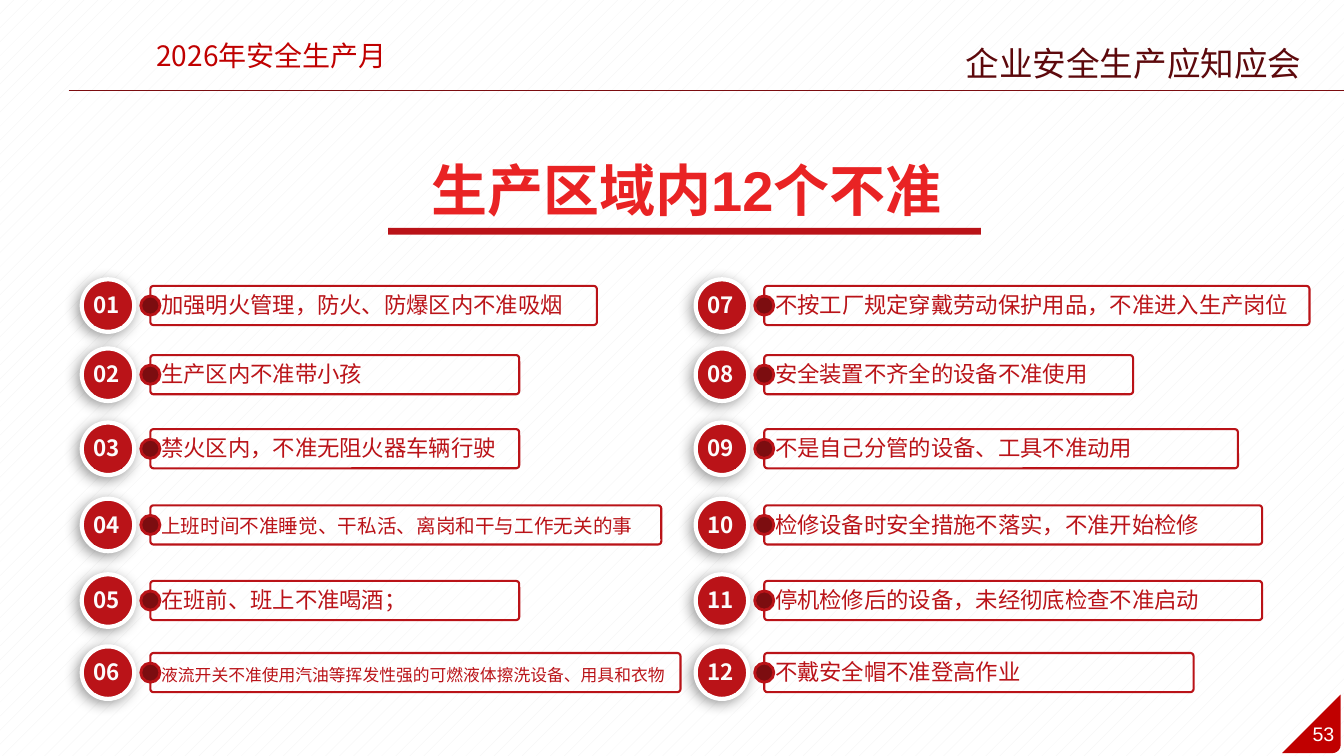
from math import cos, sin, radians
from lxml.etree import SubElement as Sub
from pptx import Presentation
from pptx.util import Pt
from pptx.dml.color import RGBColor as Rgb
from pptx.enum.dml import MSO_PATTERN as Pattern
from pptx.enum.shapes import MSO_SHAPE as Shape, MSO_CONNECTOR as Wire
from pptx.enum.text import PP_ALIGN as Align, MSO_ANCHOR as Anchor, MSO_AUTO_SIZE as Fit
from pptx.oxml.ns import qn

# Content
MONTH = "2026年安全生产月"
TOPIC = "企业安全生产应知应会"
TITLE = "生产区域内12个不准"
PAGE = "53"
# (rule, box width, type size key), one list for each column
RULES = [
    [
        ("加强明火管理，防火、防爆区内不准吸烟", 319, "body"),
        ("生产区内不准带小孩", 263.5, "body"),
        ("禁火区内，不准无阻火器车辆行驶", 263.5, "body"),
        ("上班时间不准睡觉、干私活、离岗和干与工作无关的事", 365, "small"),
        ("在班前、班上不准喝酒；", 263.5, "body"),
        ("液流开关不准使用汽油等挥发性强的可燃液体擦洗设备、用具和衣物", 378.7, "tiny"),
    ],
    [
        ("不按工厂规定穿戴劳动保护用品，不准进入生产岗位", 389.5, "body"),
        ("安全装置不齐全的设备不准使用", 263.5, "body"),
        ("不是自己分管的设备、工具不准动用", 338.4, "body"),
        ("检修设备时安全措施不落实，不准开始检修", 355.7, "body"),
        ("停机检修后的设备，未经彻底检查不准启动", 355.7, "body"),
        ("不戴安全帽不准登高作业", 306.7, "body"),
    ],
]

# Theme
THEME = {
    "red": "BA1318", "dark": "7C0D10", "deep": "5D090C", "bright": "E92324",
    "brand": "C00000", "white": "FFFFFF", "pale": "FCFCFC", "grain": "F2F2F2",
    "cjk": "Noto Sans CJK SC", "latin": "Arial",
    "title": 40, "topic": 24, "month": 20, "body": 16, "small": 14, "tiny": 12,
}

# Layout
COLS = (58.4, 496.9)
ROWS = (199.5, 248.9, 301.8, 356.2, 410.2, 461.7)
DISC = 37.5
MID = DISC / 2
BOX_H = 28
DOT = 13.7


def tint(key):
    return Rgb.from_string(THEME[key])


def write(item, text, size, color, face="cjk", bold=False, align=Align.LEFT,
          lead=None, inset=None, wrap=True, anchor=Anchor.MIDDLE):
    frame = item.text_frame
    frame.text = text
    frame.word_wrap = wrap
    frame.vertical_anchor = anchor
    if inset:
        frame.margin_left = frame.margin_right = Pt(inset[0])
        frame.margin_top = frame.margin_bottom = Pt(inset[1])
    para = frame.paragraphs[0]
    para.alignment = align
    if lead:
        para.line_spacing = Pt(lead)
    font = para.runs[0].font
    font.size, font.bold, font.name = Pt(THEME[size]), bold, THEME[face]
    font.color.rgb = tint(color)
    Sub(para.runs[0]._r.get_or_add_rPr(), qn("a:ea"), typeface=THEME["cjk"])


def label(x, y, w, h, text, size, color, grow=True, **style):
    item = slide.shapes.add_textbox(Pt(x), Pt(y), Pt(w), Pt(h))
    style.setdefault("anchor", Anchor.TOP)
    write(item, text, size, color, **style)
    item.text_frame.auto_size = Fit.SHAPE_TO_FIT_TEXT if grow else Fit.NONE


def paint(item, fill=None, line=None, width=1):
    item.shadow.inherit = False
    if fill:
        item.fill.solid()
        item.fill.fore_color.rgb = tint(fill)
    else:
        item.fill.background()
    if line:
        item.line.color.rgb = tint(line)
        item.line.width = Pt(width)
    else:
        item.line.fill.background()


def draw(home, kind, x, y, w, h, *look):
    item = home.shapes.add_shape(kind, Pt(x), Pt(y), Pt(w), Pt(h))
    paint(item, *look)
    return item


def shade(item):
    glow = Sub(item._element.spPr.find(qn("a:effectLst")), qn("a:outerShdw"),
               blurRad=str(Pt(10)), dist=str(Pt(3)), dir="8100000",
               algn="tr", rotWithShape="0")
    black = Sub(glow, qn("a:srgbClr"), val="000000")
    Sub(black, qn("a:alpha"), val="40000")


def badge(x, y, num):
    group = slide.shapes.add_group_shape()
    shade(draw(group, Shape.OVAL, x, y, DISC, DISC, "red", "white", 3))
    plate = draw(group, Shape.RECTANGLE, x + 8.6, y + 8.6, 20.2, 24.5, "red")
    write(plate, f"{num:02d}", "body", "pale", bold=True, lead=14, inset=(0, 0))


def entry(x, y, text, wide, size):
    group = slide.shapes.add_group_shape()
    box = draw(group, Shape.ROUNDED_RECTANGLE, x + 49, y + MID - BOX_H / 2,
               wide, BOX_H, None, "red", 1.5)
    box.adjustments[0] = 0.08
    write(box, text, size, "red", lead=18, wrap=False)
    draw(group, Shape.FLOWCHART_CONNECTOR, x + 49 - DOT / 2, y + MID - DOT / 2,
         DOT, DOT, "dark", "red", 2)


deck = Presentation()
deck.slide_width, deck.slide_height = Pt(960), Pt(540)
slide = deck.slides.add_slide(deck.slide_layouts[6])

# Background
back = slide.background.fill
back.patterned()
back.pattern = Pattern.PERCENT_5
back.fore_color.rgb = tint("grain")
back.back_color.rgb = tint("white")

# Header
rule = slide.shapes.add_connector(Wire.STRAIGHT, Pt(49), Pt(64.4), Pt(960), Pt(64.4))
rule.line.color.rgb = tint("dark")
rule.line.width = Pt(0.75)
Sub(rule._element.spPr, qn("a:effectLst"))
label(70.6, 23.8, 247, 31.7, MONTH, "month", "brand", align=Align.CENTER)
label(522, 27.4, 575.3, 36, TOPIC, "topic", "deep", align=Align.CENTER)

# Page corner, rounded at the lower right
right, low, turn = 957.6, 537.9, 5.8
curve = [(right - turn + turn * cos(radians(a)), low - turn + turn * sin(radians(a)))
         for a in range(0, 91, 15)]
pen = slide.shapes.build_freeform(Pt(right), Pt(low - 41.8))
pen.add_line_segments([(Pt(x), Pt(y)) for x, y in curve + [(right - 41.8, low)]])
paint(pen.convert_to_shape(), "brand")
label(929.5, 512, 31.7, 24.5, PAGE, "small", "white", face="latin",
      align=Align.CENTER, wrap=False)

# Title
label(298.8, 112.3, 439.2, 45.4, TITLE, "title", "bright", grow=False, face="latin",
      bold=True, inset=(9.4, 5), anchor=Anchor.MIDDLE)
draw(slide, Shape.RECTANGLE, 277.2, 162.7, 423.4, 5, "red")

# Rules
for col, (x, rules) in enumerate(zip(COLS, RULES)):
    for row, (y, (text, wide, size)) in enumerate(zip(ROWS, rules)):
        badge(x, y, col * len(ROWS) + row + 1)
        entry(x, y, text, wide, size)

deck.save("out.pptx")
